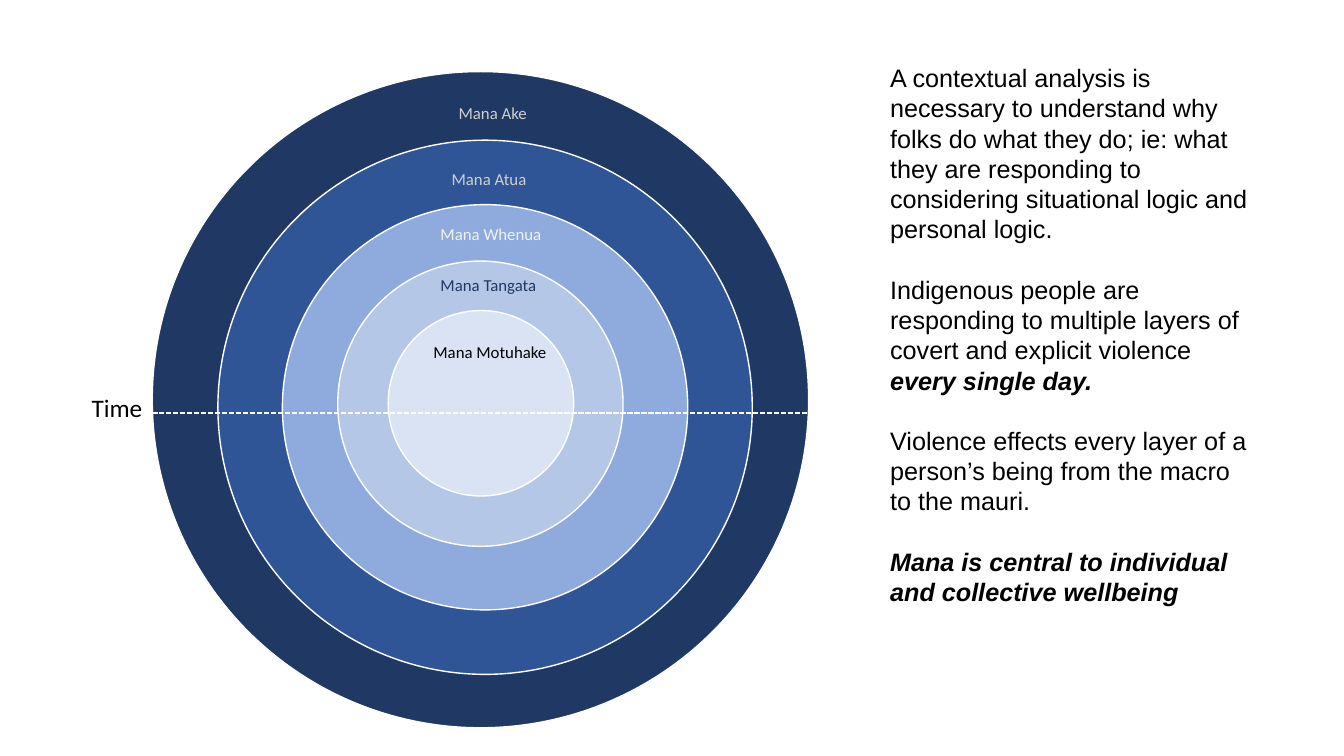
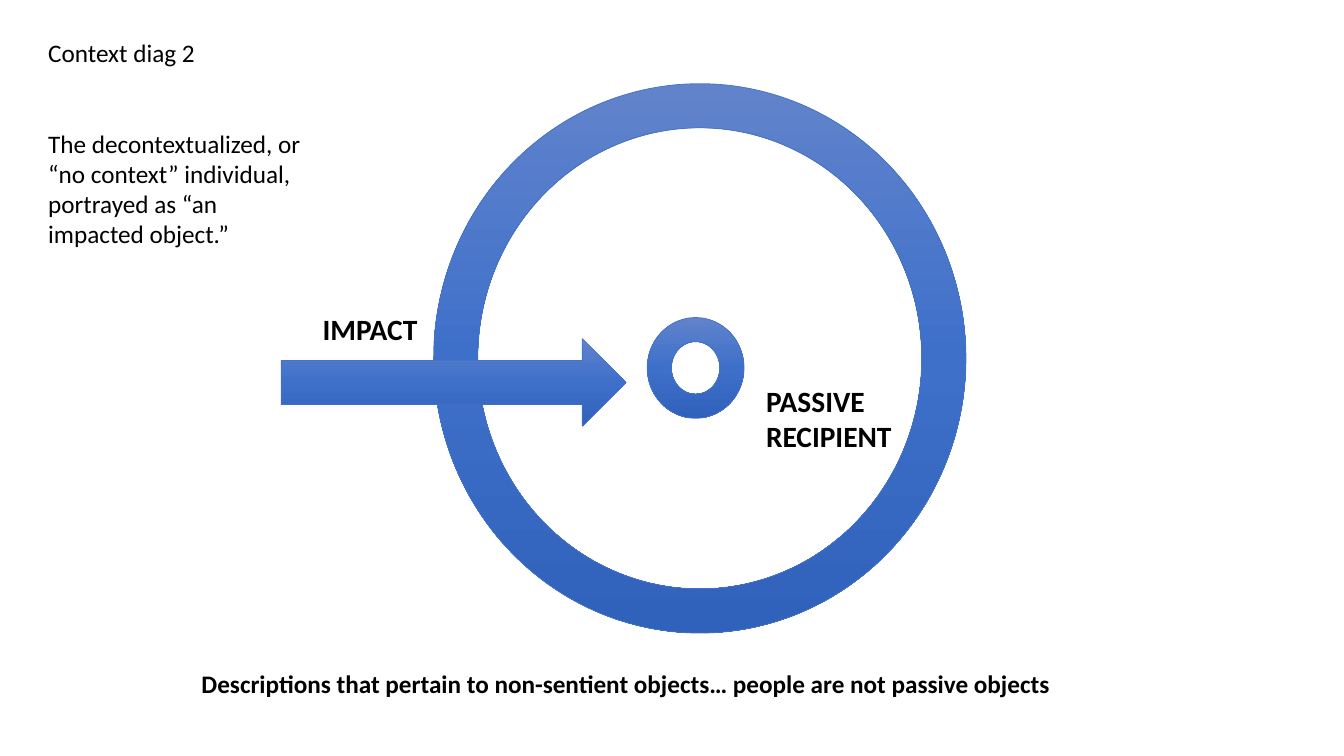
from collections import namedtuple
from copy import deepcopy

from pptx import Presentation
from pptx.dml.color import RGBColor
from pptx.enum.dml import MSO_LINE
from pptx.enum.shapes import MSO_CONNECTOR, MSO_SHAPE
from pptx.oxml.ns import qn
from pptx.oxml.xmlchemy import OxmlElement
from pptx.util import Inches, Pt

WHITE = RGBColor(0xFF, 0xFF, 0xFF)
BLACK = RGBColor(0x00, 0x00, 0x00)
NAVY = RGBColor(0x20, 0x38, 0x64)
DEEP_BLUE = RGBColor(0x2F, 0x55, 0x97)
MID_BLUE = RGBColor(0x8F, 0xAA, 0xDC)
PALE_BLUE = RGBColor(0xB4, 0xC7, 0xE7)
ICE_BLUE = RGBColor(0xDA, 0xE3, 0xF3)
SILVER = RGBColor(0xD0, 0xCE, 0xCE)
OFF_WHITE = RGBColor(0xF2, 0xF2, 0xF2)
OUTLINE_BLUE = RGBColor(0x44, 0x72, 0xC4)
GRADIENT = (
    (0, RGBColor(0x61, 0x83, 0xCB)),
    (0.5, RGBColor(0x3E, 0x70, 0xCA)),
    (1, RGBColor(0x30, 0x62, 0xBB)),
)
LINE_PITCH = 21.6

Box = namedtuple("Box", "left top width height")
Passage = namedtuple("Passage", "text emphasis blank_lines", defaults=("", 0))
Ring = namedtuple("Ring", "name left top size fill label_left label_top label_color")

PAGE = Box(0, 0, Inches(13.33), Inches(7.5))

RINGS = (
    Ring("Mana Ake", 0, 0, 100, NAVY, 45.16, 4, SILVER),
    Ring("Mana Atua", 10, 10.45, 81.41, DEEP_BLUE, 44.09, 14, SILVER),
    Ring("Mana Whenua", 19.82, 20.28, 61.75, MID_BLUE, 42.4, 22.43, OFF_WHITE),
    Ring("Mana Tangata", 28.26, 28.88, 43.47, PALE_BLUE, 42.4, 30.26, NAVY),
    Ring("Mana Motuhake", 35.94, 36.41, 28.26, ICE_BLUE, 41.32, 40.4, BLACK),
)
ANALYSIS = (
    Passage(
        "A contextual analysis is necessary to understand why folks do what they do; "
        "ie: what they are responding to considering situational logic and personal logic."
    ),
    Passage(
        "Indigenous people are responding to multiple layers of covert and explicit violence ",
        "every single day.",
        1,
    ),
    Passage("Violence effects every layer of a", "", 1),
    Passage("person’s being from the macro to the mauri."),
    Passage("", "Mana is central to individual and collective wellbeing", 1),
)
INTRODUCTION = (
    Passage("Context diag 2"),
    Passage("The decontextualized, or “no context” individual,", "", 2),
    Passage("portrayed as “an impacted object.”"),
)


def within(box, left, top, width, height):
    """Return the part of a box given in percent of its width and height."""
    return Box(
        int(box.left + box.width * left / 100),
        int(box.top + box.height * top / 100),
        int(box.width * width / 100),
        int(box.height * height / 100),
    )


def add_figure(page, kind, box, line_color, line_width):
    """Add an outlined preset shape without a shadow."""
    figure = page.shapes.add_shape(kind, *box)
    figure.shadow.inherit = False
    figure.line.color.rgb = line_color
    figure.line.width = Pt(line_width)
    return figure


def add_gradient_figure(page, kind, box):
    """Add a shape shaded from light at the top to dark at the bottom."""
    figure = add_figure(page, kind, box, OUTLINE_BLUE, 0.5)
    figure.fill.gradient()
    figure.fill.gradient_angle = 270
    stop_list = figure.fill._xPr.find(".//" + qn("a:gsLst"))
    stop_list.insert(1, deepcopy(stop_list[0]))
    for stop, (position, color) in zip(figure.fill.gradient_stops, GRADIENT):
        stop.position = position
        stop.color.rgb = color
    return figure


def style(para, size, color=BLACK, name="Calibri", bold=False):
    """Set the font of a paragraph."""
    para.font.size = Pt(size)
    para.font.color.rgb = color
    para.font.name = name
    para.font.bold = bold


def add_label(page, box, text, size, color=BLACK, bold=False):
    """Add a text box with one paragraph for each line of text."""
    frame = page.shapes.add_textbox(*box).text_frame
    frame.word_wrap = True
    frame.text = text
    for para in frame.paragraphs:
        style(para, size, color, bold=bold)


def add_prose(page, box, passages, font_name):
    """Add running text whose passages may end in bold italics."""
    frame = page.shapes.add_textbox(*box).text_frame
    frame.word_wrap = True
    for index, passage in enumerate(passages):
        para = frame.add_paragraph() if index else frame.paragraphs[0]
        style(para, 18, name=font_name)
        para.line_spacing = Pt(LINE_PITCH)
        para.space_before = Pt(LINE_PITCH * passage.blank_lines)
        if passage.text:
            para.add_run().text = passage.text
        if passage.emphasis:
            span = para.add_run()
            span.text = passage.emphasis
            span.font.bold = span.font.italic = True


def add_time_line(page, box):
    """Add the dashed line across the rings and its caption."""
    height = int(box.top + box.height * 0.52)
    line = page.shapes.add_connector(
        MSO_CONNECTOR.STRAIGHT, box.left, height, box.left + box.width, height
    )
    line.line.color.rgb = WHITE
    line.line.width = Pt(1.25)
    line.line.dash_style = MSO_LINE.SQUARE_DOT
    line._element.spPr.append(OxmlElement("a:effectLst"))
    add_label(page, within(box, -10.75, 48.08, 12, 6.14), "Time", 18)


def add_rings(page, box):
    """Add the nested circles, then their names and the time line."""
    for ring in RINGS:
        area = within(box, ring.left, ring.top, ring.size, ring.size)
        circle = add_figure(page, MSO_SHAPE.OVAL, area, WHITE, 1)
        circle.fill.solid()
        circle.fill.fore_color.rgb = ring.fill
    for ring in RINGS:
        area = within(box, ring.label_left, ring.label_top, 26.73, 4.61)
        add_label(page, area, ring.name, 12, ring.label_color)
    add_time_line(page, box)


def add_impact(page, box):
    """Add the arrow that crosses the outer ring towards the recipient."""
    outer = add_gradient_figure(page, MSO_SHAPE.DONUT, within(box, 32.26, 11.07, 39.61, 72.67))
    outer.adjustments[0] = 0.083
    add_gradient_figure(page, MSO_SHAPE.DONUT, within(box, 48.16, 42, 7.2, 13.33))
    add_gradient_figure(page, MSO_SHAPE.RIGHT_ARROW, within(box, 20.93, 44.8, 25.66, 11.6))
    add_label(page, within(box, 23.26, 40.53, 9.68, 6), "IMPACT", 21, bold=True)
    add_label(page, within(box, 56.26, 50, 11.85, 10.8), "PASSIVE\nRECIPIENT", 21, bold=True)


def build_mana_page(page):
    """Fill the slide with the layers of mana and their analysis."""
    add_rings(page, within(PAGE, 11.33, 9.47, 48.84, 86.8))
    add_prose(page, within(PAGE, 65.49, 7.6, 28.58, 74), ANALYSIS, "Arial")


def build_impact_page(page):
    """Fill the slide with the impacted object and its captions."""
    add_impact(page, PAGE)
    add_label(
        page,
        within(PAGE, 14.25, 87.73, 75.84, 5.33),
        "Descriptions that pertain to non-sentient objects… people are not passive objects",
        18,
        bold=True,
    )
    add_prose(page, within(PAGE, 2.85, 4.27, 20.41, 29.6), INTRODUCTION, "Calibri")


def main():
    """Build and save the deck."""
    deck = Presentation()
    deck.slide_width, deck.slide_height = PAGE.width, PAGE.height
    for build in (build_mana_page, build_impact_page):
        build(deck.slides.add_slide(deck.slide_layouts[6]))
    deck.save("out.pptx")


if __name__ == "__main__":
    main()
